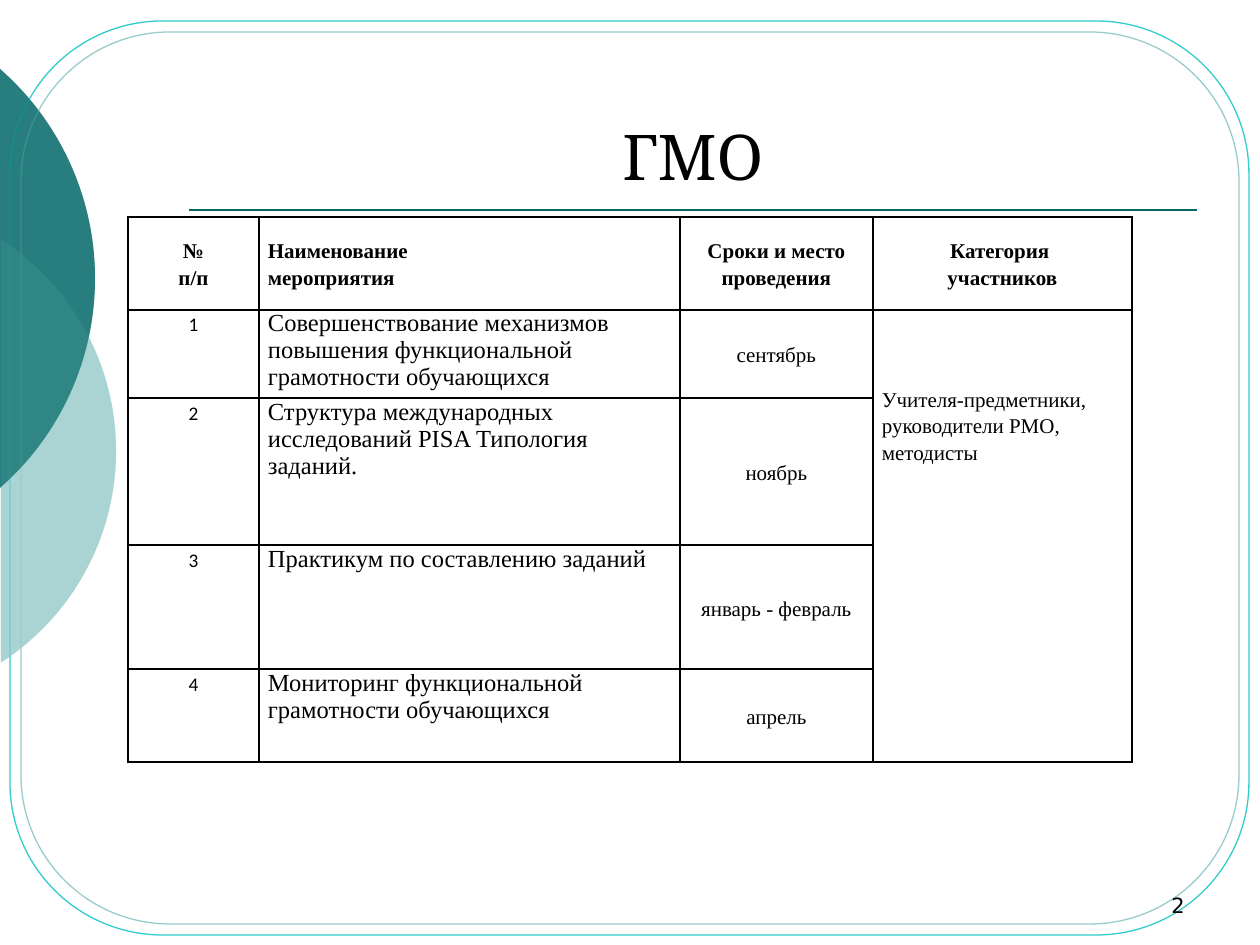
import math

import lxml.etree
import pptx
import pptx.dml.color
import pptx.enum.shapes
import pptx.enum.text
import pptx.oxml.ns
import pptx.util

EMU_PER_PX = 914400 // 126
SERIF = "Times New Roman"
ALIGN = pptx.enum.text.PP_ALIGN
ANCHOR = pptx.enum.text.MSO_ANCHOR

TITLE = "ГМО"
PAGE_NUMBER = "2"
HEADERS = [
    "№\nп/п",
    "Наименование\nмероприятия",
    "Сроки и место проведения",
    "Категория \nучастников",
]
EVENTS = [
    ("Совершенствование механизмов повышения функциональной грамотности обучающихся", "сентябрь"),
    ("Структура международных исследований PISA Типология заданий.", "ноябрь"),
    ("Практикум по составлению заданий", "январь - февраль"),
    ("Мониторинг функциональной грамотности обучающихся", "апрель"),
]
PARTICIPANTS = "Учителя-предметники, руководители РМО, методисты"

TABLE_LEFT, TABLE_TOP = 128, 217
COLUMN_WIDTHS = [131, 421, 193, 259]
ROW_HEIGHTS = [93, 83, 147, 124, 93]

# left, top, diameter, x of the straight cut, colour, opacity in percent
DISCS = [(-388, 199, 504, 1, "99CCCC", 58), (-462, 0, 557, -1, "006666", 60)]
# left, top, width, height, colour
FRAMES = [(10, 21, 1239, 914, "33CCCC"), (21, 32, 1218, 892, "99CCCC")]


def px(length):
    return pptx.util.Emu(round(length * EMU_PER_PX))


def rgb(colour):
    return pptx.dml.color.RGBColor.from_string(colour)


def add_child(parent, tag, **attributes):
    return lxml.etree.SubElement(parent, pptx.oxml.ns.qn(tag), attributes)


def add_disc(slide, left, top, diameter, cut, colour, opacity):
    """Draw the part of a disc right of the cut as two curves in the whole disc's box."""
    radius = diameter / 2
    chord = cut - left
    reach = math.acos((chord - radius) / radius)
    half_chord = radius * math.sin(reach)
    handle = 4 / 3 * math.tan(reach / 4) * radius
    handle_x = chord + handle * math.sin(reach)
    handle_y = half_chord - handle * math.cos(reach)
    upper = [(handle_x, radius - handle_y), (diameter, radius - handle), (diameter, radius)]
    lower = [(diameter, radius + handle), (handle_x, radius + handle_y),
             (chord, radius + half_chord)]

    builder = slide.shapes.build_freeform(0, 0)
    builder.add_line_segments([(px(diameter), 0), (px(diameter), px(diameter))])
    disc = builder.convert_to_shape(px(left), px(top))
    disc.left, disc.top = px(left), px(top)
    disc.width = disc.height = px(diameter)

    outline = disc._element.find(".//" + pptx.oxml.ns.qn("a:path"))
    for segment in list(outline):
        outline.remove(segment)
    outline.set("w", str(px(diameter)))
    outline.set("h", str(px(diameter)))
    for tag, points in [("a:moveTo", [(chord, radius - half_chord)]),
                        ("a:cubicBezTo", upper), ("a:cubicBezTo", lower)]:
        segment = add_child(outline, tag)
        for x, y in points:
            add_child(segment, "a:pt", x=str(px(x)), y=str(px(y)))
    add_child(outline, "a:close")

    disc.shadow.inherit = False
    disc.line.fill.background()
    disc.fill.solid()
    disc.fill.fore_color.rgb = rgb(colour)
    tint = disc._element.spPr.find(".//" + pptx.oxml.ns.qn("a:srgbClr"))
    add_child(tint, "a:alpha", val=str(opacity * 1000))


def add_frame(slide, left, top, width, height, colour):
    frame = slide.shapes.add_shape(
        pptx.enum.shapes.MSO_SHAPE.ROUNDED_RECTANGLE, px(left), px(top), px(width), px(height))
    frame.adjustments[0] = 0.167
    frame.shadow.inherit = False
    frame.fill.background()
    frame.line.color.rgb = rgb(colour)
    frame.line.width = pptx.util.Pt(0.75)


def add_title_rule(slide):
    rule = slide.shapes.add_connector(
        pptx.enum.shapes.MSO_CONNECTOR.STRAIGHT, px(189), px(210), px(1197), px(210))
    rule.line.color.rgb = rgb("006666")
    rule.line.width = pptx.util.Pt(1)
    add_child(rule._element.spPr, "a:effectLst")


def write(text_frame, text, size, font, align, bold=False, spacing=None):
    text_frame.text = text
    for paragraph in text_frame.paragraphs:
        paragraph.alignment = align
        paragraph.line_spacing = spacing
        for run in paragraph.runs:
            run.font.size = pptx.util.Pt(size)
            run.font.name = font
            run.font.bold = bold
            run.font.color.rgb = rgb("000000")


def add_label(slide, left, top, width, height, text, size, font, align):
    label = slide.shapes.add_textbox(px(left), px(top), px(width), px(height)).text_frame
    label.word_wrap = True
    label.vertical_anchor = ANCHOR.BOTTOM
    write(label, text, size, font, align)


def format_cell(cell):
    cell.margin_left = cell.margin_right = px(9)
    cell.margin_top = cell.margin_bottom = 0
    properties = cell._tc.get_or_add_tcPr()
    for side in ("a:lnL", "a:lnR", "a:lnT", "a:lnB"):
        border = add_child(properties, side, w=str(pptx.util.Pt(1)))
        add_child(add_child(border, "a:solidFill"), "a:srgbClr", val="000000")
    cell.fill.background()


def add_schedule(slide):
    table = slide.shapes.add_table(
        len(ROW_HEIGHTS), len(COLUMN_WIDTHS), px(TABLE_LEFT), px(TABLE_TOP),
        px(sum(COLUMN_WIDTHS)), px(sum(ROW_HEIGHTS))).table
    for column, width in zip(table.columns, COLUMN_WIDTHS):
        column.width = px(width)
    for row, height in zip(table.rows, ROW_HEIGHTS):
        row.height = px(height)
    for cell in table.iter_cells():
        format_cell(cell)

    for column, header in enumerate(HEADERS):
        cell = table.cell(0, column)
        cell.vertical_anchor = ANCHOR.MIDDLE
        align = ALIGN.LEFT if column == 1 else ALIGN.CENTER
        write(cell.text_frame, header, 12, SERIF, align, bold=True, spacing=1.15)

    for number, (event, month) in enumerate(EVENTS, start=1):
        number_cell, event_cell, month_cell = (table.cell(number, c) for c in range(3))
        write(number_cell.text_frame, str(number), 11, "Calibri", ALIGN.CENTER, spacing=1.15)
        write(event_cell.text_frame, event, 14, SERIF, ALIGN.LEFT)
        month_cell.vertical_anchor = ANCHOR.MIDDLE
        write(month_cell.text_frame, month, 12, SERIF, ALIGN.CENTER, spacing=1.15)

    participants = table.cell(1, 3)
    participants.merge(table.cell(len(EVENTS), 3))
    participants.margin_top = px(75)
    write(participants.text_frame, PARTICIPANTS, 12, SERIF, ALIGN.LEFT, spacing=1.15)


def main():
    deck = pptx.Presentation()
    deck.slide_width, deck.slide_height = px(1260), px(945)
    slide = deck.slides.add_slide(deck.slide_layouts[6])

    for disc in DISCS:
        add_disc(slide, *disc)
    for frame in FRAMES:
        add_frame(slide, *frame)
    add_title_rule(slide)
    # A second layer of discs deepens their tint and covers the frames.
    for disc in DISCS:
        add_disc(slide, *disc)

    add_label(slide, 189, 42, 1008, 157, TITLE, 36, "Cambria", ALIGN.CENTER)
    add_label(slide, 903, 861, 294, 63, PAGE_NUMBER, 12, "DejaVu Sans", ALIGN.RIGHT)
    add_schedule(slide)
    deck.save("out.pptx")


if __name__ == "__main__":
    main()
